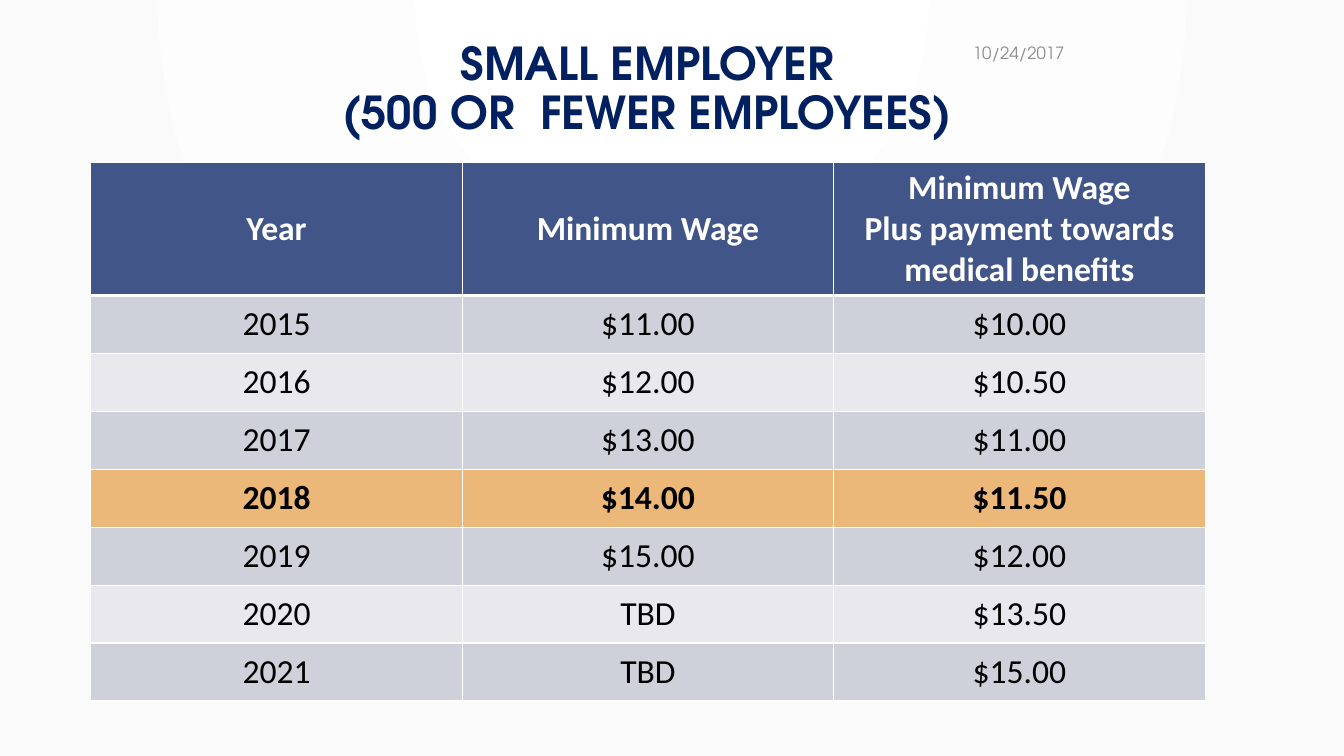
from dataclasses import dataclass

from lxml.etree import SubElement
from pptx import Presentation
from pptx.dml.color import RGBColor
from pptx.enum.text import MSO_ANCHOR as Anchor, MSO_AUTO_SIZE as AutoSize, PP_ALIGN as Align
from pptx.oxml.ns import qn
from pptx.slide import Slide
from pptx.table import _Cell as Cell
from pptx.text.text import TextFrame
from pptx.util import Cm, Pt

COLORS = {
    "center": "FFFFFF", "edge": "FAFAFA", "title": "002060", "date": "8C8C8C",
    "header": "415588", "header_text": "FFFFFF", "text": "000000",
    "odd": "CFD1DA", "even": "E9E9ED", "highlight": "ECB87A", "border": "FFFFFF",
}
DISPLAY_FONT = "TeX Gyre Adventor"
TABLE_FONT = "Calibri"


@dataclass
class TextStyle:
    font: str
    size: float
    color: str
    bold: bool = False
    align: Align = Align.CENTER


@dataclass
class WageRow:
    year: str
    wage: str
    wage_with_benefits: str
    highlighted: bool = False


HEADER = WageRow("Year", "Minimum Wage",
                 "Minimum Wage\nPlus payment towards medical benefits")
WAGES = [
    WageRow("2015", "$11.00", "$10.00"),
    WageRow("2016", "$12.00", "$10.50"),
    WageRow("2017", "$13.00", "$11.00"),
    WageRow("2018", "$14.00", "$11.50", highlighted=True),
    WageRow("2019", "$15.00", "$12.00"),
    WageRow("2020", "TBD", "$13.50"),
    WageRow("2021", "TBD", "$15.00"),
]


def rgb(name: str) -> RGBColor:
    return RGBColor.from_string(COLORS[name])


def write(frame: TextFrame, text: str, style: TextStyle) -> None:
    frame.text = text
    for paragraph in frame.paragraphs:
        paragraph.alignment = style.align
        font = paragraph.font
        font.name, font.size, font.bold = style.font, Pt(style.size), style.bold
        font.color.rgb = rgb(style.color)


def set_background(slide: Slide) -> None:
    fill = slide.background.fill
    fill.gradient()
    for stop, name, position in zip(fill.gradient_stops, ("center", "edge"), (0, 1)):
        stop.color.rgb = rgb(name)
        stop.position = position
    # Turn the linear gradient into a circular one
    gradient = slide.background._cSld.find(".//" + qn("a:gradFill"))
    gradient.remove(gradient.find(qn("a:lin")))
    circle = SubElement(gradient, qn("a:path"), {"path": "circle"})
    SubElement(circle, qn("a:fillToRect"), l="43000", t="0", r="43000", b="100000")


def set_borders(cell: Cell, top: float, bottom: float) -> None:
    properties = cell._tc.get_or_add_tcPr()
    for tag, width in (("lnL", 1), ("lnR", 1), ("lnT", top), ("lnB", bottom)):
        line = SubElement(properties, qn(f"a:{tag}"), w=str(Pt(width)))
        fill = SubElement(line, qn("a:solidFill"))
        SubElement(fill, qn("a:srgbClr"), val=COLORS["border"])


def add_title(slide: Slide) -> None:
    title = slide.shapes.title
    title.left, title.top, title.width, title.height = Cm(2.97), Cm(0.91), Cm(26.67), Cm(2.31)
    frame = title.text_frame
    frame.auto_size, frame.vertical_anchor = AutoSize.NONE, Anchor.TOP
    write(frame, "SMALL EMPLOYER\v(500 OR  FEWER EMPLOYEES)",
          TextStyle(DISPLAY_FONT, 32.4, "title", bold=True))
    frame.paragraphs[0].line_spacing = 0.9


def add_wage_table(slide: Slide) -> None:
    rows = [HEADER, *WAGES]
    header_height, row_height, column_width = 3.25, 1.46, 9.36
    table = slide.shapes.add_table(
        len(rows), 3, Cm(2.29), Cm(4.09), Cm(3 * column_width),
        Cm(header_height + row_height * len(WAGES))).table
    for column in table.columns:
        column.width = Cm(column_width)
    for index, row in enumerate(rows):
        is_header = index == 0
        table.rows[index].height = Cm(header_height if is_header else row_height)
        if is_header:
            fill = "header"
        elif row.highlighted:
            fill = "highlight"
        else:
            fill = "odd" if index % 2 else "even"
        style = TextStyle(TABLE_FONT, 24, "header_text" if is_header else "text",
                          bold=is_header or row.highlighted)
        values = (row.year, row.wage, row.wage_with_benefits)
        for cell, value in zip(table.rows[index].cells, values):
            set_borders(cell, top=3 if index == 1 else 1, bottom=3 if is_header else 1)
            cell.fill.solid()
            cell.fill.fore_color.rgb = rgb(fill)
            cell.vertical_anchor = Anchor.MIDDLE
            write(cell.text_frame, value, style)


def add_date(slide: Slide) -> None:
    frame = slide.shapes.add_textbox(Cm(20.09), Cm(0.91), Cm(6.99), Cm(0.86)).text_frame
    frame.word_wrap = True
    frame.vertical_anchor = Anchor.MIDDLE
    write(frame, "10/24/2017", TextStyle(DISPLAY_FONT, 12, "date", align=Align.RIGHT))


def main() -> None:
    presentation = Presentation()
    presentation.slide_width, presentation.slide_height = Cm(33.87), Cm(19.05)
    slide = presentation.slides.add_slide(presentation.slide_layouts[5])
    set_background(slide)
    add_title(slide)
    add_wage_table(slide)
    add_date(slide)
    presentation.save("out.pptx")


if __name__ == "__main__":
    main()
